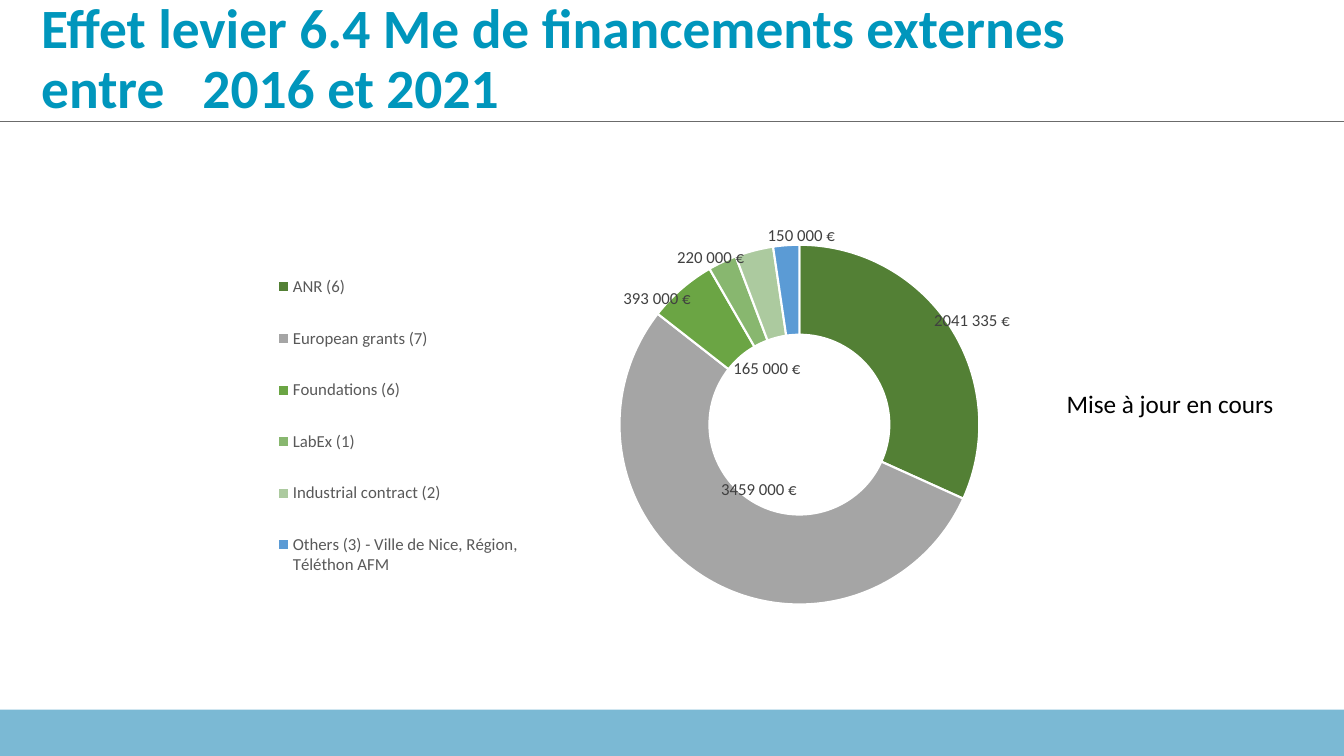
from math import cos, pi, sin

from lxml import etree
from pptx import Presentation
from pptx.chart.data import CategoryChartData
from pptx.dml.color import RGBColor
from pptx.enum.chart import XL_CHART_TYPE as ChartType, XL_LEGEND_POSITION as LegendPos
from pptx.enum.shapes import MSO_CONNECTOR as Connector, MSO_SHAPE as Shape
from pptx.enum.text import MSO_ANCHOR as Anchor
from pptx.oxml import parse_xml
from pptx.oxml.ns import nsdecls, qn
from pptx.util import Inches, Pt

# Content
TITLE = "Effet levier 6.4 Me de financements externes entre\t2016 et 2021"
NOTE = "Mise à jour en cours"
EURO = '#\\ ##0\\ "€"'
TEAL = RGBColor(0x00, 0x96, 0xBC)
BAND = RGBColor(0x14, 0x83, 0xB4)
RULE = RGBColor(0x6B, 0x6B, 0x6B)
BLACK = RGBColor(0, 0, 0)
WHITE = RGBColor(0xFF, 0xFF, 0xFF)
LEGEND = RGBColor(0x59, 0x59, 0x59)
LABEL = RGBColor(0x40, 0x40, 0x40)

# Funding source, euros, slice colour, centre of its label in inches
FUNDING = [
    ("ANR (6)", 2041335, RGBColor(0x53, 0x80, 0x35), (9.63, 3.18)),
    ("European grants (7)", 3459000, RGBColor(0xA5, 0xA5, 0xA5), (7.52, 4.85)),
    ("Foundations (6)", 393000, RGBColor(0x6B, 0xA5, 0x44), (6.51, 2.96)),
    ("LabEx (1)", 165000, RGBColor(0x88, 0xB7, 0x6F), (7.6, 3.66)),
    ("Industrial contract (2)", 220000, RGBColor(0xAC, 0xCA, 0x9F), (7.04, 2.56)),
    ("Others (3) - Ville de Nice, Région, Téléthon AFM", 150000,
     RGBColor(0x5B, 0x9B, 0xD5), (7.94, 2.34)),
]

# Layout, in inches
W, H = 13.33, 7.5
RULE_Y, BAND_Y = 1.2, 7.04
CHART = CX, CY, CW, CH = 2.42, 1.64, 8.06, 5.12
RING_X, RING_Y, RING_MID = 7.92, 4.21, 1.335

prs = Presentation()
prs.slide_width, prs.slide_height = Inches(W), Inches(H)
s = prs.slides.add_slide(prs.slide_layouts[6])


def box(*lengths):
    return [Inches(v) for v in lengths]


def style(font, size, color, bold=False):
    font.name, font.size, font.bold = "Calibri", Pt(size), bold
    font.color.rgb = color


def add_text(text, place, size, color, bold=False):
    tf = s.shapes.add_textbox(*box(*place)).text_frame
    tf.word_wrap = True
    tf.vertical_anchor = Anchor.MIDDLE
    p = tf.paragraphs[0]
    p.text = text
    style(p.runs[0].font, size, color, bold)
    return p


def layout(x, y, w=None, h=None, inner=False):
    """Manual chart layout, as shares of the chart's size."""
    parts = '<c:layoutTarget val="inner"/>' if inner else ""
    if w is not None:
        parts += '<c:xMode val="edge"/><c:yMode val="edge"/>'
    for tag, v in zip("xywh", (x, y, w, h)):
        if v is not None:
            parts += f'<c:{tag} val="{v:.4f}"/>'
    return parse_xml(f'<c:layout {nsdecls("c")}><c:manualLayout>{parts}'
                     '</c:manualLayout></c:layout>')


def place_part(parent, index, new):
    """Give a chart part its only layout, at its place among the children."""
    for old in parent.findall(qn("c:layout")):
        parent.remove(old)
    parent.insert(index, new)


# Rule under the title
ln = s.shapes.add_connector(Connector.STRAIGHT, *box(0, RULE_Y, W, RULE_Y))
ln.line.color.rgb, ln.line.width = RULE, Pt(0.5)
etree.SubElement(ln._element.spPr, qn("a:effectLst"))

# Translucent band at the foot
sp = s.shapes.add_shape(Shape.RECTANGLE, *box(0, BAND_Y, W, H - BAND_Y))
sp.shadow.inherit = False
sp.fill.solid()
sp.fill.fore_color.rgb = BAND
sp.line.fill.background()
band_color = sp._element.spPr.find(".//" + qn("a:srgbClr"))
etree.SubElement(band_color, qn("a:alpha"), val="56000")

# Title, with a tab stop before the years
p = add_text(TITLE, (0.31, 0.18, 11.19, 0.84), 39.6, TEAL, True)
p.line_spacing = 0.9
tabs = etree.SubElement(p._p.get_or_add_pPr(), qn("a:tabLst"))
etree.SubElement(tabs, qn("a:tab"), pos=str(Inches(1.6)), algn="l")

# Doughnut chart
names, amounts, colors, spots = zip(*FUNDING)
data = CategoryChartData()
data.categories = names
data.add_series("Series 1", amounts)
chart = s.shapes.add_chart(ChartType.DOUGHNUT, *box(*CHART), data).chart
style(chart.font, 12, BLACK)
chart.has_title = False
plot = chart.plots[0]
plot.vary_by_categories = True
plot._element.find(qn("c:holeSize")).set("val", "75")
place_part(plot._element.getparent(), 0, layout(0.444, 0.154, 0.479, 0.697, inner=True))

# Legend at the left of the ring
chart.has_legend = True
chart.legend.position = LegendPos.BOTTOM
chart.legend.include_in_layout = False
style(chart.legend.font, 12, LEGEND)
place_part(chart.legend._element, 1, layout(0.03, 0.155, 0.32, 0.7))

# Slices and their labels, each moved from the middle of its slice
series = plot.series[0]
labels = series.data_labels
labels.show_value = True
labels.number_format, labels.number_format_is_linked = EURO, False
style(labels.font, 12, LABEL)
for leader in labels._element.findall(qn("c:showLeaderLines")):
    leader.set("val", "0")
for i, (color, (x, y)) in enumerate(zip(colors, spots)):
    point = series.points[i]
    point.format.fill.solid()
    point.format.fill.fore_color.rgb = color
    point.format.line.color.rgb, point.format.line.width = WHITE, Pt(1.5)
    style(point.data_label.font, 12, LABEL)
    angle = 2 * pi * (sum(amounts[:i]) + amounts[i] / 2) / sum(amounts)
    dx = x - RING_X - RING_MID * sin(angle)
    dy = y - RING_Y + RING_MID * cos(angle)
    idx = series._element.findall(".//" + qn("c:dLbl"))[i].find(qn("c:idx"))
    fmt = etree.Element(qn("c:numFmt"), formatCode=EURO, sourceLinked="0")
    idx.addnext(fmt)
    idx.addnext(layout(dx / CW, dy / CH))

# Side note
add_text(NOTE, (10.48, 3.8, 2.36, 0.4), 18, BLACK)

prs.save("out.pptx")
